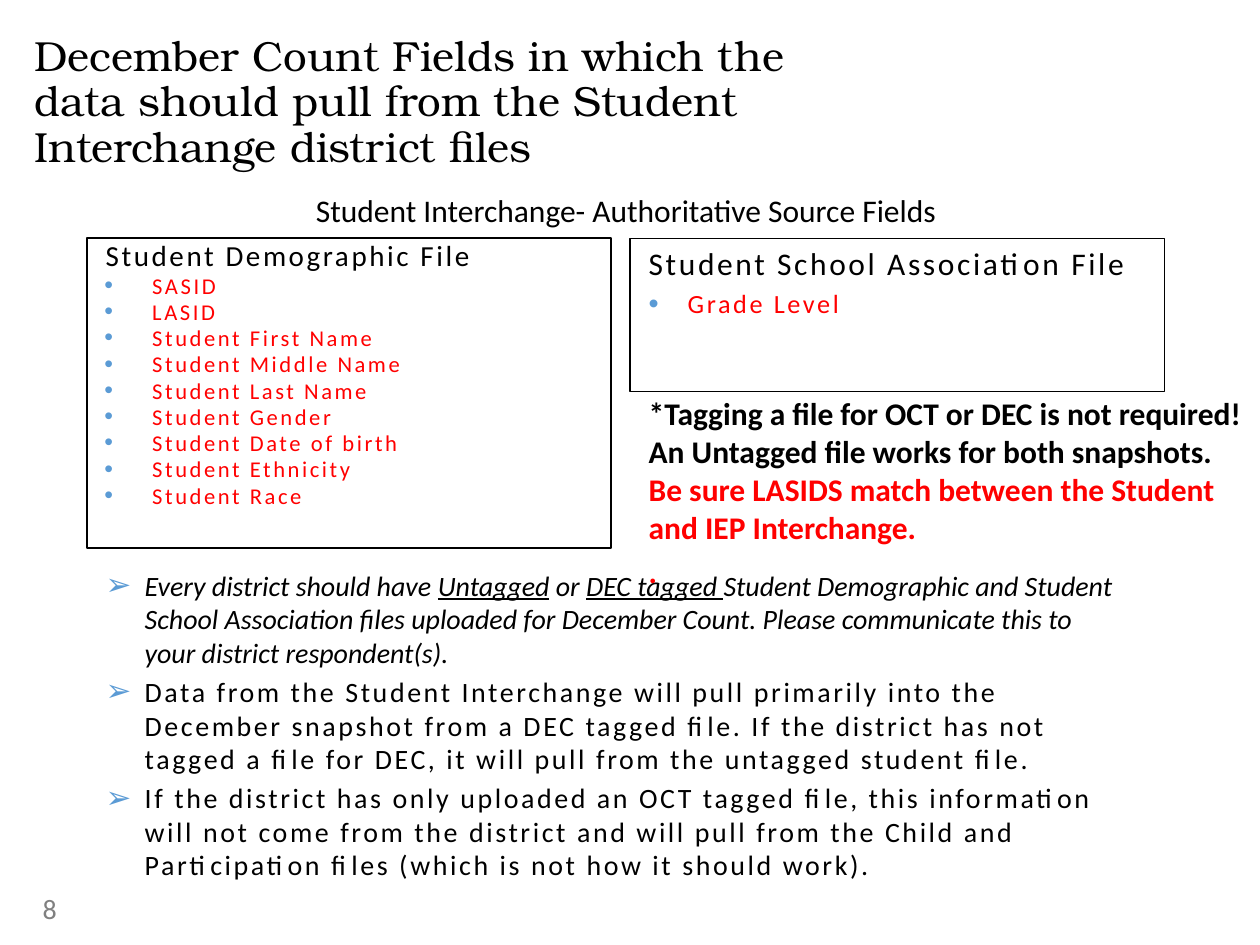
from lxml import etree
from pptx import Presentation, util as u
from pptx.dml.color import RGBColor
from pptx.enum import shapes, text
from pptx.oxml.ns import qn

BLACK = RGBColor(0, 0, 0)
RED = RGBColor(0xFF, 0, 0)
GRAY = RGBColor(0x80, 0x80, 0x80)
BULLET_BLUE = RGBColor(0x5B, 0x9B, 0xD5)
LEFT, RIGHT, BOX_TOP = 0.69, 5, 1.89
PLAIN = dict(size=18)
HEADING = dict(size=18, spacing=1.5)
BODY = dict(size=16, spacing=1.5)
ITALIC = dict(size=16, italic=True)
UNDERLINED = dict(ITALIC, underline=True)

STUDENT_FIELDS = ["SASID", "LASID", "Student First Name", "Student Middle Name",
                  "Student Last Name", "Student Gender", "Student Date of birth",
                  "Student Ethnicity", "Student Race"]
DISTRICT_NOTE = [
    ("Every district should have ", ITALIC), ("Untagged", UNDERLINED),
    (" or ", ITALIC), ("DEC tagged ", UNDERLINED),
    ("Student Demographic and Student School Association files uploaded for "
     "December Count. Please communicate this to your district respondent(s).", ITALIC)]
PULL_NOTES = [
    "Data from the Student Interchange will pull primarily into the December "
    "snapshot from a DEC tagged file. If the district has not tagged a file for "
    "DEC, it will pull from the untagged student file.",
    "If the district has only uploaded an OCT tagged file, this information will "
    "not come from the district and will pull from the Child and Participation "
    "files (which is not how it should work)."]


def place(sp, left, top, width, height):
    """Position a shape in inches."""
    for name, value in dict(left=left, top=top, width=width, height=height).items():
        setattr(sp, name, u.Inches(value))


def add_run(p, words, size, color=BLACK, font="Calibri", spacing=0, **style):
    """Append a formatted run to a paragraph."""
    r = p.add_run()
    r.text = words
    for name, value in dict(style, size=u.Pt(size), name=font).items():
        setattr(r.font, name, value)
    r.font.color.rgb = color
    if spacing:
        r.font._element.set("spc", str(int(spacing * 100)))


def set_indent(p, margin, hanging=0):
    """Set the left margin and hanging indent in inches."""
    pPr = p._p.get_or_add_pPr()
    pPr.set("marL", str(u.Inches(margin)))
    pPr.set("indent", str(-u.Inches(hanging)))


def add_bullet(p, char):
    """Give a paragraph a blue bullet character."""
    pPr = p._p.get_or_add_pPr()
    color = etree.SubElement(pPr, qn("a:buClr"))
    etree.SubElement(color, qn("a:srgbClr")).set("val", str(BULLET_BLUE))
    etree.SubElement(pPr, qn("a:buSzPct")).set("val", "110000")
    etree.SubElement(pPr, qn("a:buFont")).set("typeface", "Arial")
    etree.SubElement(pPr, qn("a:buChar")).set("char", char)


def add_paragraph(tf, runs, indent=(0, 0), bullet=None, line_spacing=1.0,
                  align=text.PP_ALIGN.LEFT):
    """Fill the empty first paragraph or append a new one."""
    first = not tf.paragraphs[0].runs
    p = tf.paragraphs[0] if first else tf.add_paragraph()
    p.alignment, p.line_spacing = align, line_spacing
    p.space_before = u.Pt(0 if first else round(0.2 * runs[0][1]["size"], 1))
    set_indent(p, *indent)
    if bullet:
        add_bullet(p, bullet)
    for words, style in runs:
        add_run(p, words, **style)


def add_text(s, *box):
    """Add a wrapping text box and return its text frame."""
    tf = s.shapes.add_textbox(*map(u.Inches, box)).text_frame
    tf.word_wrap = True
    return tf


def add_file_box(s, box, heading, fields, heading_style, field_size, indent, line_spacing):
    """Add an outlined box listing the fields of one file."""
    sp = s.shapes.add_shape(shapes.MSO_SHAPE.RECTANGLE, *map(u.Inches, box))
    sp.shadow.inherit = False
    sp.fill.background()
    sp.line.color.rgb, sp.line.width = BLACK, u.Pt(0.75)
    tf = sp.text_frame
    tf.word_wrap, tf.vertical_anchor = True, text.MSO_ANCHOR.TOP
    add_paragraph(tf, [(heading, heading_style)], (0.05, 0), line_spacing=line_spacing)
    field_style = dict(size=field_size, color=RED, spacing=1.5)
    for field in fields:
        add_paragraph(tf, [(field, field_style)], indent, "•", line_spacing)


def set_title(s, words):
    """Move and format the title placeholder."""
    sp = s.shapes.title
    place(sp, 0.27, 0.28, 6.65, 0.83)
    tf = sp.text_frame
    frame = dict(margin_left=0, margin_right=0, margin_top=0, margin_bottom=0,
                 word_wrap=True, vertical_anchor=text.MSO_ANCHOR.TOP,
                 auto_size=text.MSO_AUTO_SIZE.NONE)
    for name, value in frame.items():
        setattr(tf, name, value)
    add_paragraph(tf, [(words, dict(size=24, font="TeX Gyre Bonum"))], line_spacing=0.9)


def main():
    """Build and save the slide."""
    prs = Presentation()
    prs.slide_width, prs.slide_height = u.Inches(10), u.Inches(7.5)
    s = prs.slides.add_slide(prs.slide_layouts[5])
    set_title(s, "December Count Fields in which the data should pull from the "
                 "Student Interchange district files")
    add_file_box(s, (LEFT, BOX_TOP, 4.16, 2.46), "Student Demographic File",
                 STUDENT_FIELDS, dict(HEADING, size=16.6), 12.9, (0.42, 0.38), 0.8)
    add_file_box(s, (RIGHT, BOX_TOP, 4.24, 1.22), "Student School Association File",
                 ["Grade Level"], HEADING, 15, (0.36, 0.31), 1.0)
    add_paragraph(add_text(s, 0.24, 7.03, 2.25, 0.4), [("8", dict(size=16, color=GRAY))])
    add_paragraph(add_text(s, LEFT, 1.47, 8.56, 0.4),
                  [("Student Interchange- Authoritative Source Fields", PLAIN)],
                  align=text.PP_ALIGN.CENTER)

    notes = add_text(s, LEFT, 4.46, 8.31, 2.63)
    for runs in [DISTRICT_NOTE] + [[(note, BODY)] for note in PULL_NOTES]:
        add_paragraph(notes, runs, (0.36, 0.31), "➢")

    tagging = add_text(s, RIGHT, 3.08, 5, 1.68)
    bold = dict(PLAIN, bold=True)
    warning = dict(bold, color=RED)
    add_paragraph(tagging, [
        ("*Tagging a file for OCT or DEC is not required! An Untagged file works "
         "for both snapshots. ", bold),
        ("Be sure LASIDS match between the Student and IEP Interchange.", warning)],
        (0.05, 0))
    add_paragraph(tagging, [(".", warning)], (0.05, 0))
    prs.save("out.pptx")


if __name__ == "__main__":
    main()
